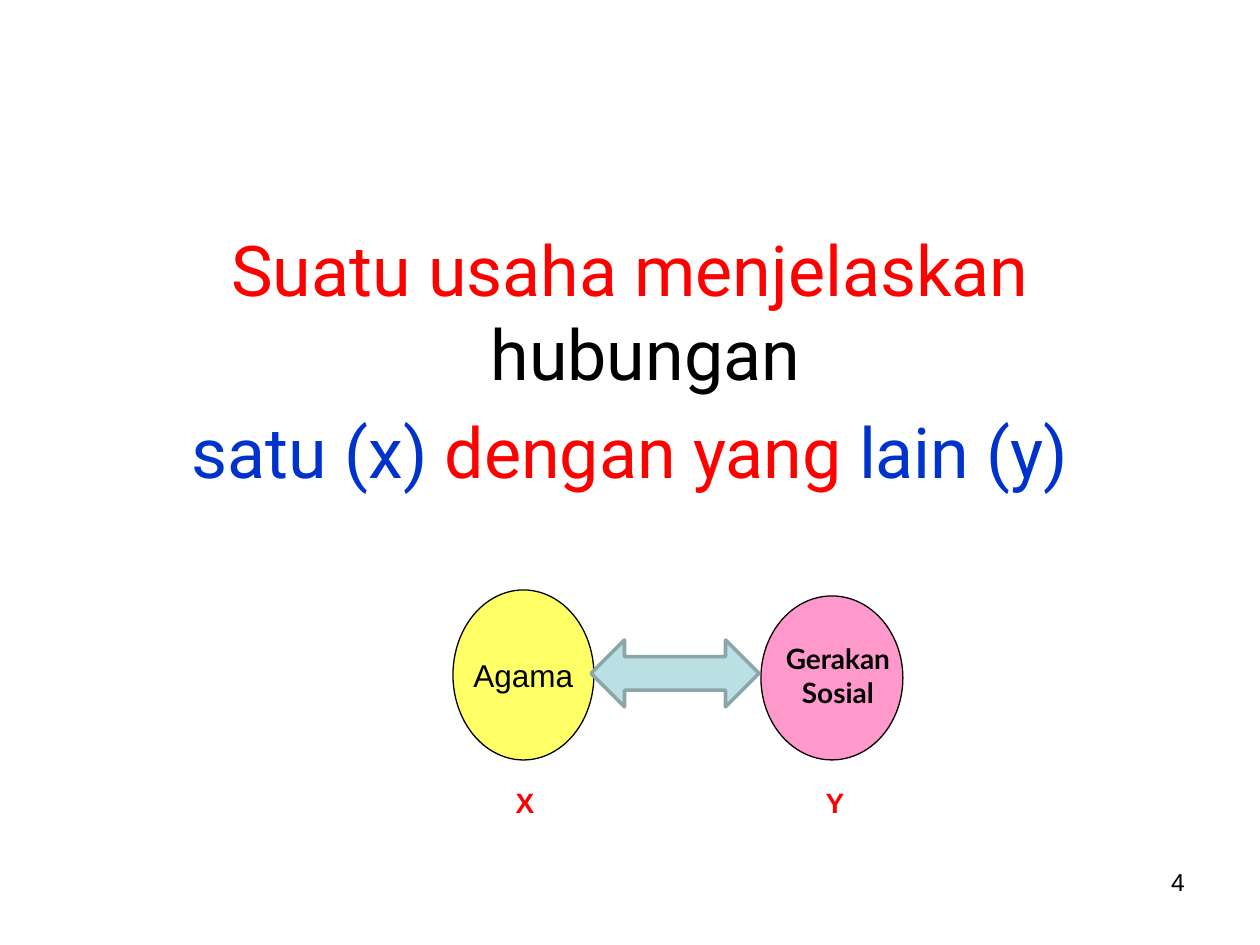
from pptx import Presentation
from pptx import util as u
from pptx.dml.color import RGBColor
from pptx.enum import shapes, text

PX = 914400 // 126
BLACK, RED, BLUE = "000000", "FF0000", "0033CC"
OVAL = shapes.MSO_SHAPE.OVAL
ARROW = shapes.MSO_SHAPE.LEFT_RIGHT_ARROW
CENTER, RIGHT = text.PP_ALIGN.CENTER, text.PP_ALIGN.RIGHT
TOP, MIDDLE = text.MSO_ANCHOR.TOP, text.MSO_ANCHOR.MIDDLE

# Fonts: name, size, bold
BODY = ("Roboto", 40, False)
CONCEPT = ("Arial", 18, False)
MOVEMENT = ("Lato", 16, True)
VARIABLE = ("Arial", 16, True)
NUMBER = ("Arial", 14, False)

# Paragraphs are lists of (wording, colour)
STATEMENT = [
    [("Suatu usaha menjelaskan ", RED), ("hubungan ", BLACK)],
    [("satu (x) ", BLUE), ("dengan yang ", RED), ("lain (y)", BLUE)],
]
# box in px, paragraphs, font, alignment
TEXT_BOXES = [
    ((903, 861, 294, 66), [[("4", BLACK)]], NUMBER, RIGHT),
    ((325, 779, 400, 66), [[("X", RED)]], VARIABLE, CENTER),
    ((635, 779, 400, 66), [[("Y", RED)]], VARIABLE, CENTER),
]
# preset, box in px, fill, line colour, line width, paragraphs, font
DIAGRAM = [
    (OVAL, (761, 596, 142, 164), "FF99CC", BLACK, 0.75, [], None),
    (OVAL, (453, 590, 141, 170), "FFFF66", BLACK, 0.75, [[("Agama", BLACK)]], CONCEPT),
    (OVAL, (780, 601, 116, 149), None, None, 0,
     [[("Gerakan", BLACK)], [("Sosial", BLACK)]], MOVEMENT),
    (ARROW, (591, 640, 168, 67), "BBE0E3", "8AA6A8", 2, [], None),
]


def color(value):
    return RGBColor.from_string(value)


def emu(box):
    return [length * PX for length in box]


def write(shape, paragraphs, font, alignment, anchor=TOP, wrap=True):
    frame = shape.text_frame
    frame.word_wrap, frame.vertical_anchor = wrap, anchor
    name, size, bold = font
    formats = {"name": name, "size": u.Pt(size), "bold": bold}
    for index, runs in enumerate(paragraphs):
        paragraph = frame.add_paragraph() if index else frame.paragraphs[0]
        paragraph.alignment = alignment
        for wording, run_color in runs:
            run = paragraph.add_run()
            run.text = wording
            for attribute, value in formats.items():
                setattr(run.font, attribute, value)
            run.font.color.rgb = color(run_color)


def add_text(slide, box, paragraphs, font, alignment):
    shape = slide.shapes.add_textbox(*emu(box))
    write(shape, paragraphs, font, alignment)
    return shape


def add_figure(slide, preset, box, fill, line, width, paragraphs, font):
    shape = slide.shapes.add_shape(preset, *emu(box))
    shape.shadow.inherit = False
    if fill:
        shape.fill.solid()
        shape.fill.fore_color.rgb = color(fill)
        shape.line.color.rgb = color(line)
        shape.line.width = u.Pt(width)
    else:
        shape.fill.background()
        shape.line.fill.background()
    if paragraphs:
        write(shape, paragraphs, font, CENTER, MIDDLE, wrap=False)


def add_statement(slide):
    """Add the main sentence, with hanging indents."""
    shape = add_text(slide, (63, 220, 1134, 624), STATEMENT, BODY, CENTER)
    indent = 48 * PX
    for paragraph in shape.text_frame.paragraphs:
        paragraph.space_before = u.Pt(8)
        properties = paragraph._p.get_or_add_pPr()
        properties.set("marL", str(indent))
        properties.set("indent", str(-indent))


def main():
    presentation = Presentation()
    presentation.slide_width, presentation.slide_height = emu((1260, 945))
    slide = presentation.slides.add_slide(presentation.slide_layouts[6])
    add_statement(slide)
    for figure in DIAGRAM:
        add_figure(slide, *figure)
    for text_box in TEXT_BOXES:
        add_text(slide, *text_box)
    presentation.save("out.pptx")


if __name__ == "__main__":
    main()
